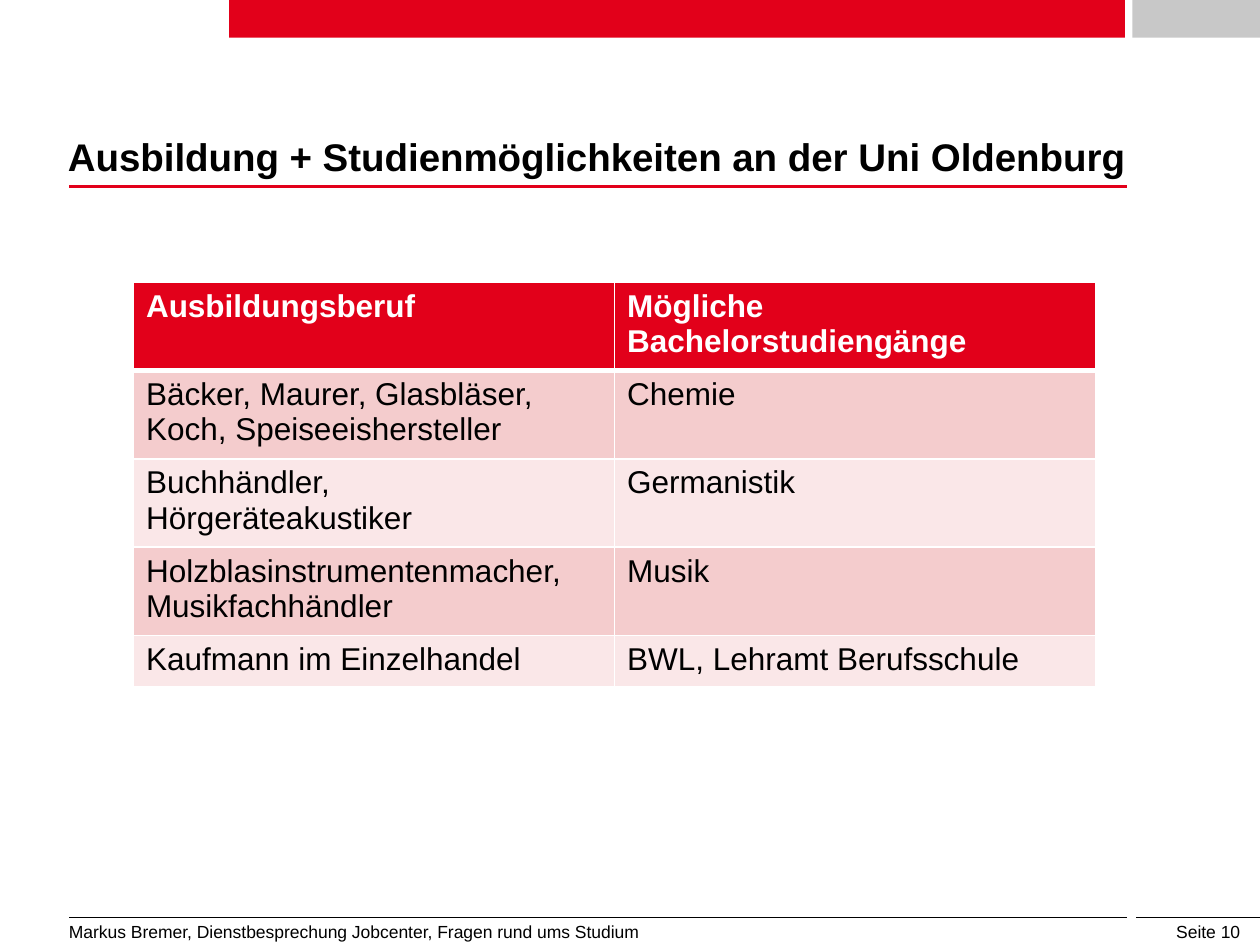
from lxml import etree
from pptx import Presentation
from pptx.dml.color import RGBColor
from pptx.enum import shapes, text
from pptx.oxml import ns
from pptx.util import Cm, Pt

COLORS = {
    "red": "E2001A",
    "grey": "C8C8C8",
    "black": "000000",
    "white": "FFFFFF",
    "band_dark": "F4CCCD",
    "band_light": "FAE7E8",
}
SLIDE_WIDTH, SLIDE_HEIGHT = 25.4, 19.05
CONTENT_LEFT, CONTENT_RIGHT = 1.4, 22.71
FOOTER_LINE_Y, FOOTER_TEXT_Y = 18.49, 18.44

COURSES = [
    ("Ausbildungsberuf", "Mögliche Bachelorstudiengänge"),
    ("Bäcker, Maurer, Glasbläser, Koch, Speiseeishersteller", "Chemie"),
    ("Buchhändler, Hörgeräteakustiker", "Germanistik"),
    ("Holzblasinstrumentenmacher, Musikfachhändler", "Musik"),
    ("Kaufmann im Einzelhandel", "BWL, Lehramt Berufsschule"),
]
ROW_HEIGHTS = [1.78] * 4 + [1.04]
COLUMN_WIDTH = 9.7


def rgb(name):
    return RGBColor.from_string(COLORS[name])


def write(frame, wording, size=10, color="black", bold=False,
          align=text.PP_ALIGN.LEFT, spacing=None):
    frame.word_wrap = True
    paragraph = frame.paragraphs[0]
    paragraph.alignment = align
    paragraph.line_spacing = spacing
    run = paragraph.add_run()
    run.text = wording
    run.font.name = "Arial"
    run.font.size = Pt(size)
    run.font.bold = bold
    run.font.color.rgb = rgb(color)


def add_label(slide, left, top, width, height, wording, **style):
    label = slide.shapes.add_textbox(Cm(left), Cm(top), Cm(width), Cm(height))
    write(label.text_frame, wording, **style)
    return label.text_frame


def add_bar(slide, left, width, color):
    bar = slide.shapes.add_shape(shapes.MSO_SHAPE.RECTANGLE,
                                 Cm(left), 0, Cm(width), Cm(0.76))
    bar.shadow.inherit = False
    bar.fill.solid()
    bar.fill.fore_color.rgb = rgb(color)
    bar.line.fill.background()


def add_rule(slide, left, right, y, color="black", weight=0.5):
    rule = slide.shapes.add_connector(shapes.MSO_CONNECTOR.STRAIGHT,
                                      Cm(left), Cm(y), Cm(right), Cm(y))
    rule.line.color.rgb = rgb(color)
    rule.line.width = Pt(weight)
    etree.SubElement(rule._element.spPr, ns.qn("a:effectLst"))


def add_borders(cell, **weights):
    """Draw white cell borders; weights are points keyed by L, R, T and B."""
    properties = cell._tc.get_or_add_tcPr()
    for side, weight in weights.items():
        border = etree.SubElement(properties, ns.qn(f"a:ln{side}"), w=str(Pt(weight)))
        fill = etree.SubElement(border, ns.qn("a:solidFill"))
        etree.SubElement(fill, ns.qn("a:srgbClr"), val=COLORS["white"])


def add_course_table(slide):
    columns = len(COURSES[0])
    table = slide.shapes.add_table(
        len(COURSES), columns, Cm(2.69), Cm(5.69),
        Cm(COLUMN_WIDTH * columns), Cm(sum(ROW_HEIGHTS))).table
    for column in table.columns:
        column.width = Cm(COLUMN_WIDTH)
    for index, (entries, height) in enumerate(zip(COURSES, ROW_HEIGHTS)):
        table.rows[index].height = Cm(height)
        header = index == 0
        band = "red" if header else "band_dark" if index % 2 else "band_light"
        for column, entry in enumerate(entries):
            cell = table.cell(index, column)
            add_borders(cell, L=1, R=1, T=3 if index == 1 else 1, B=3 if header else 1)
            cell.fill.solid()
            cell.fill.fore_color.rgb = rgb(band)
            write(cell.text_frame, entry, size=18, bold=header,
                  color="white" if header else "black")


def add_title(slide, wording):
    frame = add_label(slide, 1.37, 1.93, 21.95, 1.7, wording,
                      size=22, bold=True, spacing=0.9)
    frame.vertical_anchor = text.MSO_ANCHOR.BOTTOM
    frame.margin_left = frame.margin_right = 0
    frame.margin_top = frame.margin_bottom = 0


def main():
    deck = Presentation()
    deck.slide_width, deck.slide_height = Cm(SLIDE_WIDTH), Cm(SLIDE_HEIGHT)
    slide = deck.slides.add_slide(deck.slide_layouts[6])

    add_bar(slide, 4.62, 18.06, "red")
    add_bar(slide, 22.83, 2.57, "grey")
    add_rule(slide, CONTENT_LEFT, CONTENT_RIGHT, 3.76, color="red", weight=1.5)
    add_rule(slide, CONTENT_LEFT, CONTENT_RIGHT, FOOTER_LINE_Y)
    add_rule(slide, 22.91, SLIDE_WIDTH, FOOTER_LINE_Y)
    add_label(slide, 21.62, FOOTER_TEXT_Y, 3.63, 0.46, "Seite 10",
              align=text.PP_ALIGN.RIGHT)
    add_label(slide, 1.14, FOOTER_TEXT_Y, 18.26, 0.99,
              "Markus Bremer, Dienstbesprechung Jobcenter, Fragen rund ums Studium")
    add_title(slide, "Ausbildung + Studienmöglichkeiten an der Uni Oldenburg")
    add_course_table(slide)

    deck.save("out.pptx")


if __name__ == "__main__":
    main()
